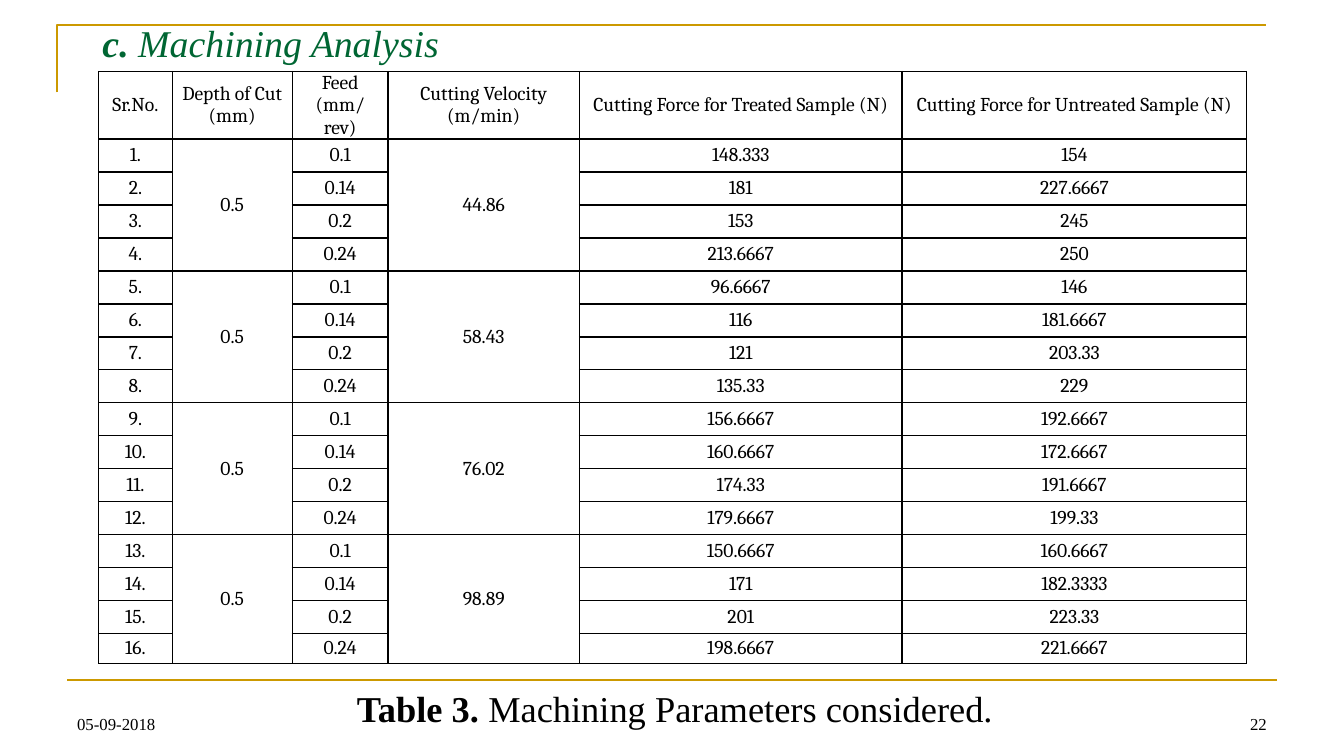
"""Build the machining analysis slide with its table of cutting forces."""
import dataclasses

import lxml.etree
import pptx
import pptx.dml.color
import pptx.enum.shapes
import pptx.enum.text
import pptx.oxml.ns
import pptx.util

GRID_COLUMNS, GRID_ROWS = 160, 90
ALIGN = pptx.enum.text.PP_ALIGN
ANCHOR = pptx.enum.text.MSO_ANCHOR

HEADINGS = ["Sr.No.", "Depth of Cut (mm)", "Feed\n(mm/rev)", "Cutting Velocity (m/min)",
            "Cutting Force for Treated Sample (N)", "Cutting Force for Untreated Sample (N)"]
DEPTH = 0.5
FEEDS = [0.1, 0.14, 0.2, 0.24]
VELOCITIES = [44.86, 58.43, 76.02, 98.89]
TREATED_FORCES = [148.333, 181, 153, 213.6667, 96.6667, 116, 121, 135.33,
                  156.6667, 160.6667, 174.33, 179.6667, 150.6667, 171, 201, 198.6667]
UNTREATED_FORCES = [154, 227.6667, 245, 250, 146, 181.6667, 203.33, 229,
                    192.6667, 172.6667, 191.6667, 199.33, 160.6667, 182.3333, 223.33, 221.6667]
COLUMN_WIDTHS = [8.75, 14.3, 11.4, 22.8, 38.4, 41.05]
ROW_HEIGHTS = [7.8] + [3.93] * 15 + [3.5]


@dataclasses.dataclass(frozen=True)
class Theme:
    """Hold the colours, fonts and sizes of the slide."""
    ink: str = "000000"
    heading: str = "006633"
    rule: str = "CC9900"
    text_font: str = "Times New Roman"
    table_font: str = "Cambria"
    title_size: float = 27
    caption_size: float = 26
    table_size: float = 14
    footer_size: float = 12
    rule_width: float = 1.5
    border_width: float = 1


def add_span(para, text, *, font, size, color, bold=False, italic=False):
    """Add one formatted run to a paragraph."""
    span = para.add_run()
    span.text = text
    span.font.name = font
    span.font.size = pptx.util.Pt(size)
    span.font.bold = bold
    span.font.italic = italic
    span.font.color.rgb = pptx.dml.color.RGBColor.from_string(color)


class Page:
    """Draw elements on one slide, measured in grid columns and rows."""

    def __init__(self, deck, theme):
        """Add a slide with a title to the deck."""
        self.theme = theme
        self.column = deck.slide_width / GRID_COLUMNS
        self.row = deck.slide_height / GRID_ROWS
        self.slide = deck.slides.add_slide(deck.slide_layouts[5])
        self.shapes = self.slide.shapes

    def across(self, columns):
        """Turn grid columns into a length."""
        return pptx.util.Emu(round(columns * self.column))

    def down(self, rows):
        """Turn grid rows into a length."""
        return pptx.util.Emu(round(rows * self.row))

    def area(self, left, top, width, height):
        """Turn a grid area into four lengths."""
        return self.across(left), self.down(top), self.across(width), self.down(height)

    def style_rule(self, line):
        """Give a line the colour and width of a rule."""
        line.color.rgb = pptx.dml.color.RGBColor.from_string(self.theme.rule)
        line.width = pptx.util.Pt(self.theme.rule_width)

    def corner(self, left, top, right, bottom):
        """Draw the open corner that frames the title."""
        builder = self.shapes.build_freeform(self.across(left), self.down(bottom))
        points = [(left, top), (right, top)]
        builder.add_line_segments([(self.across(x), self.down(y)) for x, y in points], close=False)
        outline = builder.convert_to_shape()
        outline.fill.background()
        outline.shadow.inherit = False
        self.style_rule(outline.line)

    def rule(self, left, right, top):
        """Draw a horizontal rule."""
        line = self.shapes.add_connector(
            pptx.enum.shapes.MSO_CONNECTOR.STRAIGHT,
            self.across(left), self.down(top), self.across(right), self.down(top))
        self.style_rule(line.line)
        lxml.etree.SubElement(line._element.spPr, pptx.oxml.ns.qn("a:effectLst"))

    def fill_frame(self, frame, spans, anchor, align, **style):
        """Write text and bold pairs into a text frame."""
        frame.word_wrap = True
        frame.auto_size = pptx.enum.text.MSO_AUTO_SIZE.NONE
        frame.vertical_anchor = anchor
        para = frame.paragraphs[0]
        para.alignment = align
        for text, bold in spans:
            add_span(para, text, font=self.theme.text_font, bold=bold, **style)

    def title(self, spans, area):
        """Place and fill the title placeholder."""
        box = self.shapes.title
        box.left, box.top, box.width, box.height = self.area(*area)
        self.fill_frame(box.text_frame, spans, ANCHOR.BOTTOM, ALIGN.LEFT,
                        size=self.theme.title_size, color=self.theme.heading, italic=True)

    def text(self, spans, area, size, anchor=ANCHOR.TOP, align=ALIGN.LEFT):
        """Add a text box."""
        box = self.shapes.add_textbox(*self.area(*area))
        self.fill_frame(box.text_frame, spans, anchor, align, size=size, color=self.theme.ink)

    def border(self, cell):
        """Draw the four borders of a cell."""
        properties = cell._tc.get_or_add_tcPr()
        for index, side in enumerate(("lnL", "lnR", "lnT", "lnB")):
            edge = lxml.etree.Element(pptx.oxml.ns.qn(f"a:{side}"),
                                      w=str(pptx.util.Pt(self.theme.border_width)))
            fill = lxml.etree.SubElement(edge, pptx.oxml.ns.qn("a:solidFill"))
            lxml.etree.SubElement(fill, pptx.oxml.ns.qn("a:srgbClr"), val=self.theme.ink)
            properties.insert(index, edge)

    def fill_cell(self, cell, value):
        """Format a cell and write its centred lines."""
        cell.fill.background()
        cell.vertical_anchor = ANCHOR.MIDDLE
        cell.margin_left = cell.margin_right = self.across(0.84)
        cell.margin_top = cell.margin_bottom = 0
        self.border(cell)
        if value is None:
            return
        for index, text in enumerate(str(value).split("\n")):
            frame = cell.text_frame
            para = frame.add_paragraph() if index else frame.paragraphs[0]
            para.alignment = ALIGN.CENTER
            add_span(para, text, font=self.theme.table_font,
                     size=self.theme.table_size, color=self.theme.ink)

    def table(self, records, left, top, widths, heights, merged_columns, group):
        """Add a table whose given columns are merged in groups of rows."""
        table = self.shapes.add_table(
            len(heights), len(widths), *self.area(left, top, sum(widths), sum(heights))).table
        table.first_row = table.horz_banding = False
        for column, width in zip(table.columns, widths):
            column.width = self.across(width)
        for row, height in zip(table.rows, heights):
            row.height = self.down(height)
        for row, record in zip(table.rows, records):
            for cell, value in zip(row.cells, record):
                self.fill_cell(cell, value)
        for column in merged_columns:
            for first in range(1, len(heights), group):
                table.cell(first, column).merge(table.cell(first + group - 1, column))


def table_records():
    """List the heading row and one row for each trial."""
    records = [HEADINGS]
    for index, forces in enumerate(zip(TREATED_FORCES, UNTREATED_FORCES)):
        group, step = divmod(index, len(FEEDS))
        depth, velocity = (None, None) if step else (DEPTH, VELOCITIES[group])
        records.append([f"{index + 1}.", depth, FEEDS[step], velocity, *forces])
    return records


def main():
    """Build and save the deck."""
    deck = pptx.Presentation()
    deck.slide_width = pptx.util.Inches(13.33)
    deck.slide_height = pptx.util.Inches(7.5)
    theme = Theme()
    page = Page(deck, theme)
    page.corner(6.75, 3, 150.75, 11)
    page.rule(8, 152, 81)
    page.title([("c. ", True), ("Machining Analysis", False)], (11, 1.5, 138, 6.9))
    page.table(table_records(), 11.75, 8.5, COLUMN_WIDTHS, ROW_HEIGHTS,
               merged_columns=(1, 3), group=len(FEEDS))
    page.text([("Table 3. ", True), ("Machining Parameters considered.", False)],
              (41.3, 81.1, 79.3, 6.5), theme.caption_size)
    page.text([("05-09-2018", False)], (8, 82, 37.3, 6), theme.footer_size, ANCHOR.BOTTOM)
    page.text([("22", False)], (114.7, 82, 37.3, 6), theme.footer_size, ANCHOR.BOTTOM, ALIGN.RIGHT)
    deck.save("out.pptx")


if __name__ == "__main__":
    main()
